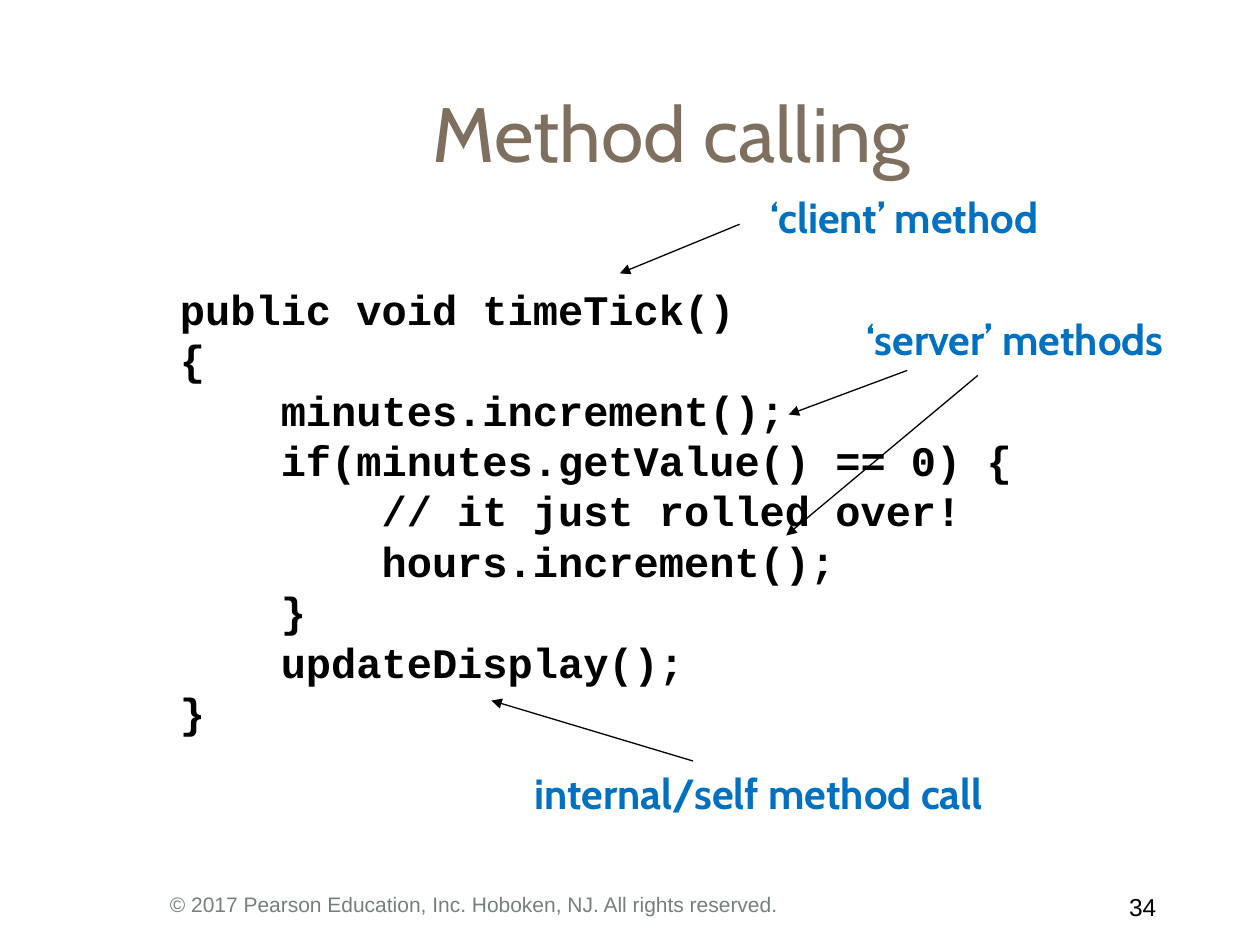
from pptx import Presentation
from pptx.dml.color import RGBColor
from pptx.enum.shapes import MSO_CONNECTOR
from pptx.enum.text import MSO_ANCHOR, PP_ALIGN
from pptx.oxml.ns import qn
from pptx.util import Inches, Pt
from lxml import etree

BLACK = RGBColor(0x00, 0x00, 0x00)
BLUE = RGBColor(0x00, 0x70, 0xC0)
BROWN = RGBColor(0x7F, 0x6F, 0x5E)
GRAY = RGBColor(0x76, 0x80, 0x7A)
LEFT, CENTER, RIGHT = PP_ALIGN.LEFT, PP_ALIGN.CENTER, PP_ALIGN.RIGHT
TOP, MIDDLE = MSO_ANCHOR.TOP, MSO_ANCHOR.MIDDLE
STRAIGHT = MSO_CONNECTOR.STRAIGHT

CODE = """public void timeTick()
{
    minutes.increment();
    if(minutes.getValue() == 0) {
        // it just rolled over!
        hours.increment();
    }
    updateDisplay();
}"""

# label, box, arrows as (start, end)
NOTES = [
    ("‘client’ method", (6.02, 1.47, 2.64, 0.5),
     [((5.87, 1.78), (4.92, 2.17))]),
    ("‘server’ methods", (6.78, 2.44, 2.88, 0.5),
     [((7.2, 2.94), (6.26, 3.29)), ((7.76, 2.98), (6.24, 4.25))]),
    ("internal/self method call", (4.14, 6.04, 4.1, 0.5),
     [((5.5, 6.04), (3.9, 5.56))]),
]


def add_text(slide, box, text, font="Arial", size=12, color=BLACK,
             bold=False, align=LEFT, anchor=TOP, pitch=None):
    """Write each line of text as a paragraph; pitch is the line height in points."""
    frame = slide.shapes.add_textbox(*map(Inches, box)).text_frame
    frame.word_wrap = True
    frame.vertical_anchor = anchor
    frame.text = text
    for para in frame.paragraphs:
        para.alignment = align
        if pitch:
            para.line_spacing = Pt(pitch)
        for run in para.runs:
            run.font.name = font
            run.font.size = Pt(size)
            run.font.bold = bold
            run.font.color.rgb = color


def add_arrow(slide, start, end):
    line = slide.shapes.add_connector(STRAIGHT, *map(Inches, start + end))
    line.line.color.rgb = BLACK
    line.line.width = Pt(0.75)
    etree.SubElement(line.line._get_or_add_ln(), qn("a:tailEnd"), type="triangle")
    etree.SubElement(line._element.spPr, qn("a:effectLst"))


def add_title(slide, box):
    add_text(slide, box, "Method calling", font="Cabin", size=44,
             color=BROWN, align=CENTER, anchor=MIDDLE)


def add_code(slide, box):
    add_text(slide, box, CODE, font="Courier New", size=24, bold=True, pitch=28.8)


def add_note(slide, box, label, arrows):
    add_text(slide, box, label, font="Cabin", size=24, color=BLUE, bold=True)
    for start, end in arrows:
        add_arrow(slide, start, end)


def add_footer(slide, box):
    left, top, width, height = box
    num = 0.58
    add_text(slide, (left, top, width - num, height),
             "© 2017 Pearson Education, Inc. Hoboken, NJ. All rights reserved.",
             color=GRAY)
    add_text(slide, (left + width - num, top, num, height), "34 ",
             size=14, align=RIGHT)


def main():
    deck = Presentation()
    deck.slide_width, deck.slide_height = Inches(10), Inches(7.5)
    slide = deck.slides.add_slide(deck.slide_layouts[6])
    add_title(slide, (1.08, 0.42, 8.5, 1.25))
    add_code(slide, (1.33, 2.2, 8.33, 3.74))
    for label, box, arrows in NOTES:
        add_note(slide, box, label, arrows)
    add_footer(slide, (1.25, 7.03, 8.08, 0.33))
    deck.save("out.pptx")


if __name__ == "__main__":
    main()
